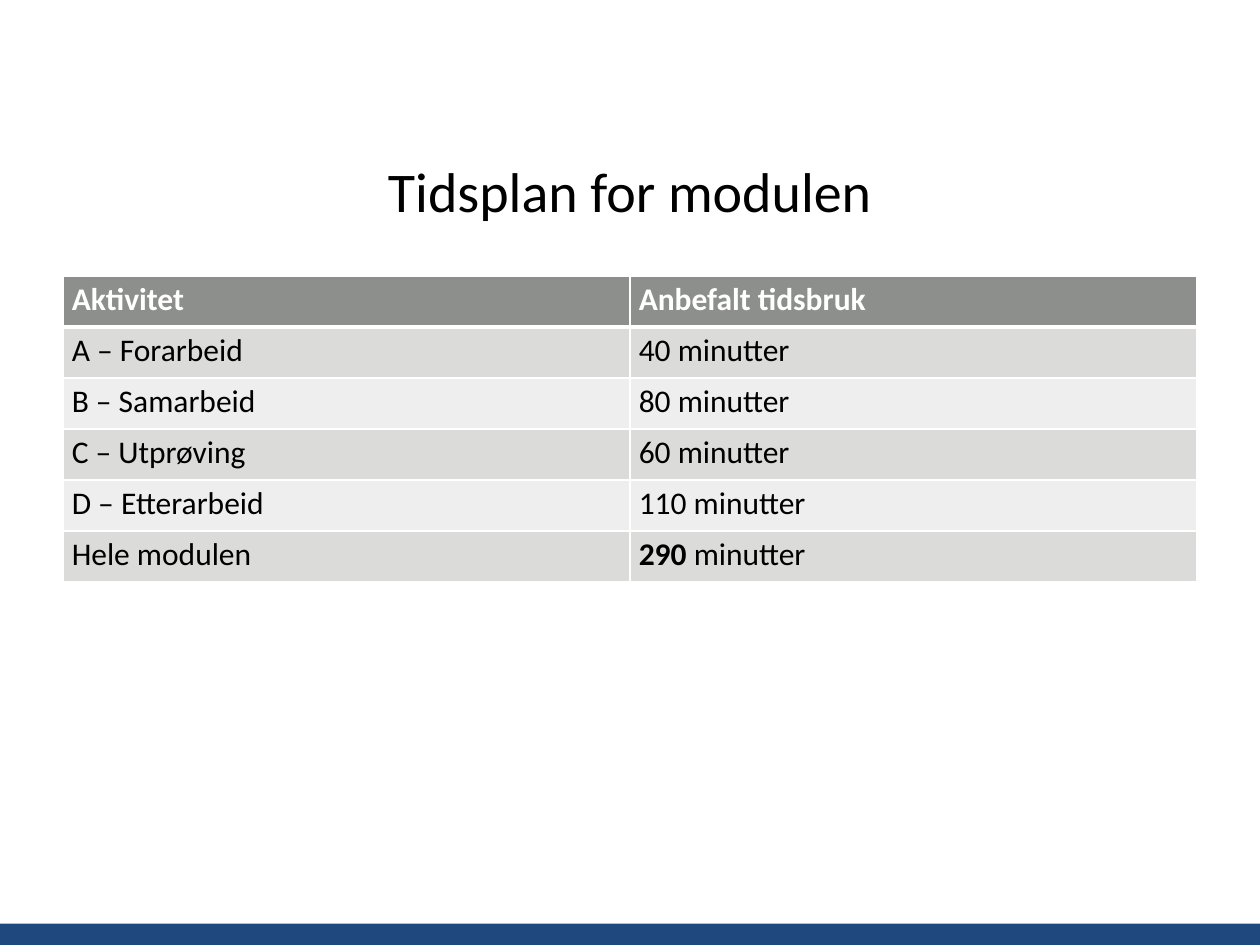
from dataclasses import dataclass

from lxml import etree
from pptx import Presentation
from pptx.dml.color import RGBColor
from pptx.enum import shapes, text
from pptx.oxml import ns
from pptx.util import Inches, Pt


@dataclass(frozen=True)
class Theme:
    font: str = "Calibri"
    title_size: int = 32
    table_size: int = 18
    ink: str = "000000"
    white: str = "FFFFFF"
    footer: str = "1F487E"
    header: str = "8D8F8C"
    bands: tuple = ("DBDBDA", "EEEEEE")


theme = Theme()


def set_font(paragraph, size, color):
    paragraph.font.name = theme.font
    paragraph.font.size = Pt(size)
    paragraph.font.color.rgb = RGBColor.from_string(color)


def add_border(cell, side, width):
    """Draw a white line on one side (L, R, T or B); call before filling the cell."""
    line = etree.SubElement(cell._tc.get_or_add_tcPr(), ns.qn(f"a:ln{side}"), w=str(Pt(width)))
    fill = etree.SubElement(line, ns.qn("a:solidFill"))
    etree.SubElement(fill, ns.qn("a:srgbClr"), val=theme.white)


prs = Presentation()
prs.slide_width, prs.slide_height = Inches(10), Inches(7.5)
slide = prs.slides.add_slide(prs.slide_layouts[5])

# Footer band
footer = slide.shapes.add_shape(
    shapes.MSO_SHAPE.RECTANGLE, Inches(0), Inches(7.33), Inches(10), Inches(0.17)
)
footer.shadow.inherit = False
footer.fill.solid()
footer.fill.fore_color.rgb = RGBColor.from_string(theme.footer)
footer.line.fill.background()

# Title
title = slide.shapes.title
title.left, title.top, title.width, title.height = Inches(0.5), Inches(1), Inches(9), Inches(1.01)
title.text_frame.text = "Tidsplan for modulen"
title.text_frame.vertical_anchor = text.MSO_ANCHOR.MIDDLE
heading = title.text_frame.paragraphs[0]
heading.alignment = text.PP_ALIGN.CENTER
set_font(heading, theme.title_size, theme.ink)

# Schedule: each cell is a list of (text, bold) runs
activities = [
    ("A – Forarbeid", 40),
    ("B – Samarbeid", 80),
    ("C – Utprøving", 60),
    ("D – Etterarbeid", 110),
]
total = sum(minutes for _, minutes in activities)
rows = [
    [[("Aktivitet", True)], [("Anbefalt tidsbruk", True)]],
    *[[[(name, False)], [(f"{minutes} minutter", False)]] for name, minutes in activities],
    [[("Hele modulen", False)], [(str(total), True), (" minutter", False)]],
]
schedule = slide.shapes.add_table(
    len(rows), 2, Inches(0.5), Inches(2.19), Inches(9), Inches(2.43)
).table

for r, row in enumerate(rows):
    is_header = r == 0
    background = theme.header if is_header else theme.bands[(r - 1) % 2]
    for c, runs in enumerate(row):
        cell = schedule.cell(r, c)
        cell.margin_left = cell.margin_right = Inches(0.07)
        cell.margin_top = cell.margin_bottom = Inches(0.04)
        for side in "LRTB":
            header_edge = (is_header and side == "B") or (r == 1 and side == "T")
            add_border(cell, side, 3 if header_edge else 1)
        cell.fill.solid()
        cell.fill.fore_color.rgb = RGBColor.from_string(background)
        paragraph = cell.text_frame.paragraphs[0]
        set_font(paragraph, theme.table_size, theme.white if is_header else theme.ink)
        for words, bold in runs:
            run = paragraph.add_run()
            run.text = words
            run.font.bold = bold

prs.save("out.pptx")
